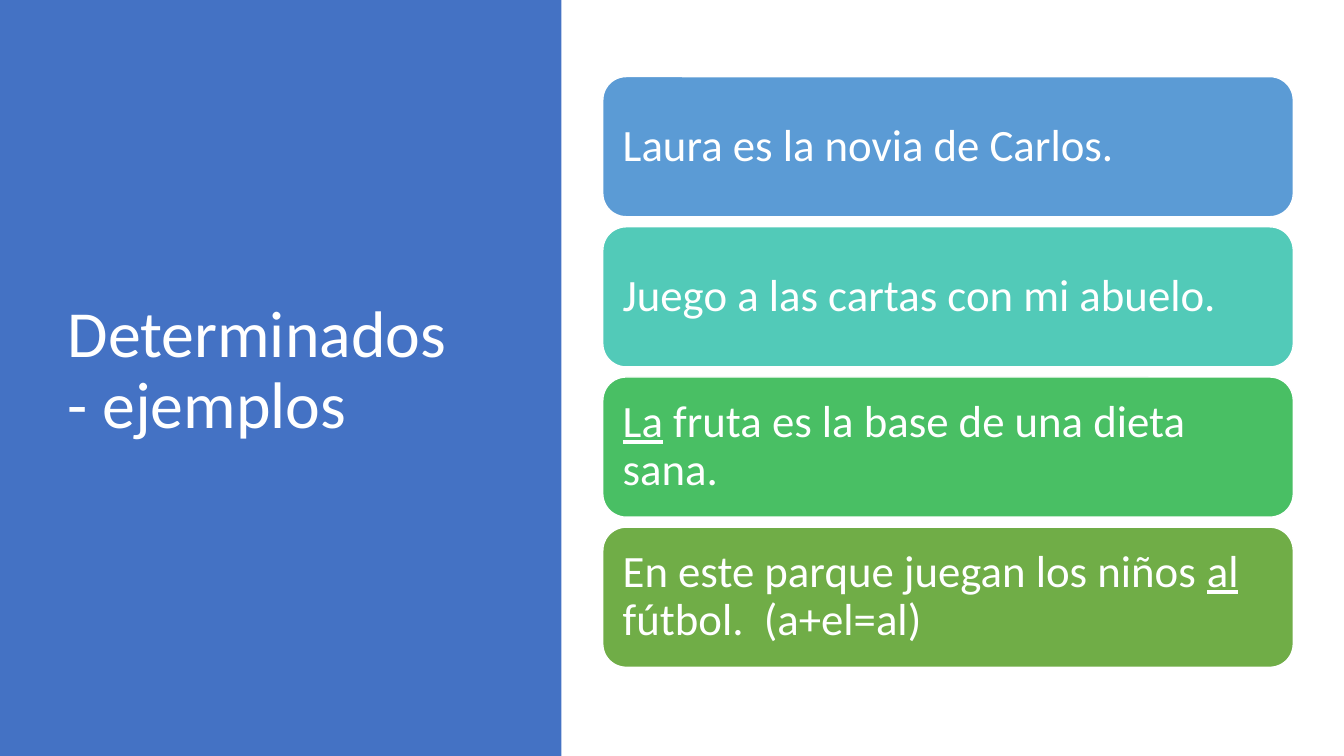
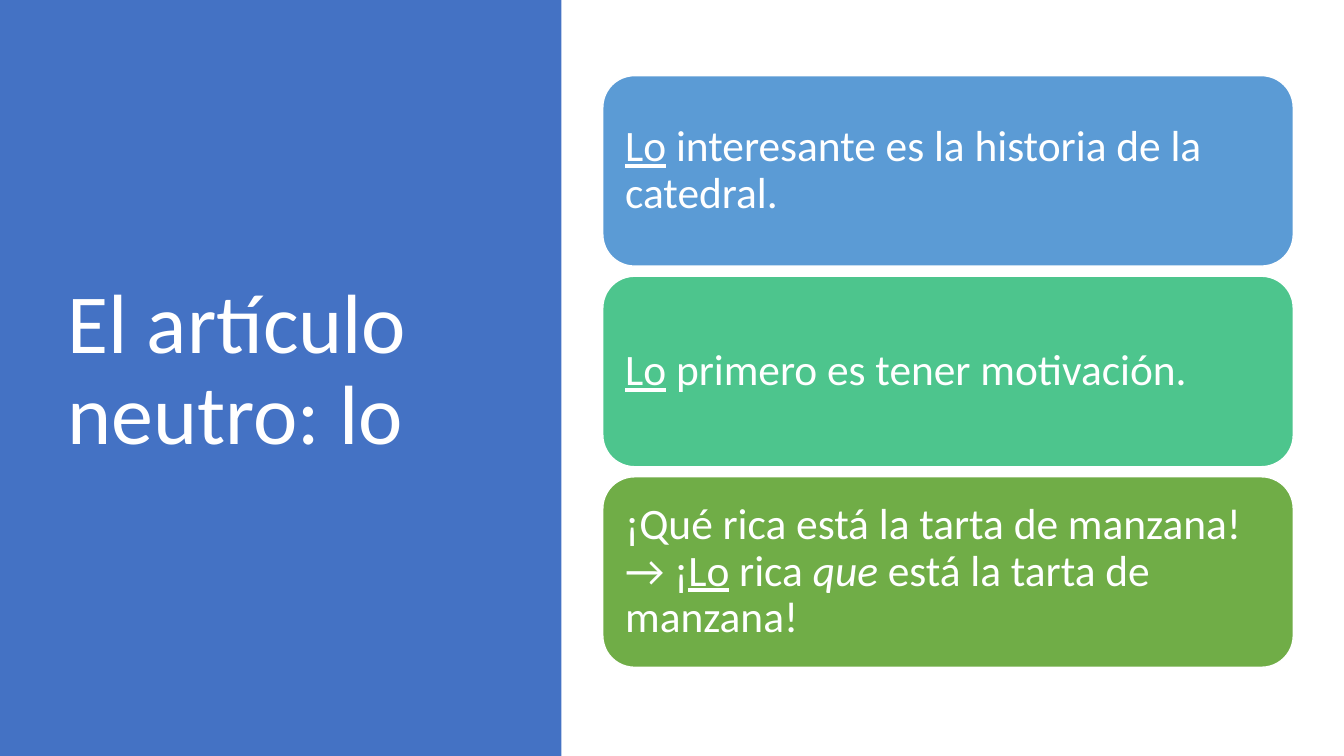
import pptx
import pptx.dml.color
import pptx.enum.shapes
import pptx.enum.text
import pptx.util

Inches = pptx.util.Inches
Shapes = pptx.enum.shapes.MSO_SHAPE

FONT = "Calibri"
WHITE = "FFFFFF"
PANEL_BLUE = "4472C4"
CARD_LEFT, CARD_WIDTH, CARD_GAP = 5.98, 6.85, 0.1
UNDERLINE = {"underline": True}
ITALIC = {"italic": True}

SLIDES = [
    {
        "title": "Determinados - ejemplos", "title_size": 47, "text_size": 32,
        "top": 0.76, "step": 1.49,
        "cards": [
            ("5B9BD5", [("Laura es la novia de Carlos.", {})]),
            ("52CAB8", [("Juego a las cartas con mi abuelo.", {})]),
            ("49BF64", [("La", UNDERLINE),
                        (" fruta es la base de una dieta sana.", {})]),
            ("70AD47", [("En este parque juegan los niños ", {}),
                        ("al ", UNDERLINE),
                        ("fútbol.  (a+el=al)", {})]),
        ],
    },
    {
        "title": "El artículo neutro: lo", "title_size": 60, "text_size": 31,
        "top": 0.75, "step": 1.99,
        "cards": [
            ("5B9BD5", [("Lo", UNDERLINE),
                        (" interesante es la historia de la catedral.", {})]),
            ("4DC58D", [("Lo", UNDERLINE),
                        (" primero es tener motivación.", {})]),
            ("70AD47", [("¡Qué rica está la tarta de manzana! → ¡", {}),
                        ("Lo", UNDERLINE), (" rica ", {}), ("que", ITALIC),
                        (" está la tarta de manzana!", {})]),
        ],
    },
]


def rgb(value):
    return pptx.dml.color.RGBColor.from_string(value)


def write_text(shape, runs, size, inset):
    """Fill a shape with one left-aligned, vertically centred white paragraph."""
    frame = shape.text_frame
    frame_format = {
        "word_wrap": True,
        "auto_size": pptx.enum.text.MSO_AUTO_SIZE.NONE,
        "vertical_anchor": pptx.enum.text.MSO_ANCHOR.MIDDLE,
        "margin_left": inset, "margin_right": inset,
        "margin_top": inset, "margin_bottom": inset,
    }
    for name, value in frame_format.items():
        setattr(frame, name, value)
    paragraph = frame.paragraphs[0]
    paragraph.alignment = pptx.enum.text.PP_ALIGN.LEFT
    paragraph.line_spacing = 0.9
    for text, style in runs:
        run = paragraph.add_run()
        run.text = text
        run.font.color.rgb = rgb(WHITE)
        font_format = {"name": FONT, "size": pptx.util.Pt(size), **style}
        for name, value in font_format.items():
            setattr(run.font, name, value)


presentation = pptx.Presentation()
presentation.slide_width = Inches(13.333)
presentation.slide_height = Inches(7.5)
title_only = presentation.slide_layouts[5]

for content in SLIDES:
    slide = presentation.slides.add_slide(title_only)

    title = slide.shapes.title
    title.left, title.top = Inches(0.57), Inches(0.68)
    title.width, title.height = Inches(4.16), Inches(6.02)
    write_text(title, [(content["title"], {})], content["title_size"], Inches(0.1))

    panel = slide.shapes.add_shape(
        Shapes.RECTANGLE, 0, 0, Inches(5.57), presentation.slide_height)
    panel.shadow.inherit = False
    panel.fill.solid()
    panel.fill.fore_color.rgb = rgb(PANEL_BLUE)
    panel.line.fill.background()
    title.element.addprevious(panel.element)

    for index, (color, runs) in enumerate(content["cards"]):
        card = slide.shapes.add_shape(
            Shapes.ROUNDED_RECTANGLE,
            Inches(CARD_LEFT), Inches(content["top"] + index * content["step"]),
            Inches(CARD_WIDTH), Inches(content["step"] - CARD_GAP))
        card.shadow.inherit = False
        card.fill.solid()
        card.fill.fore_color.rgb = rgb(color)
        card.line.color.rgb = rgb(WHITE)
        card.line.width = pptx.util.Pt(1)
        write_text(card, runs, content["text_size"], Inches(0.13))

presentation.save("out.pptx")
